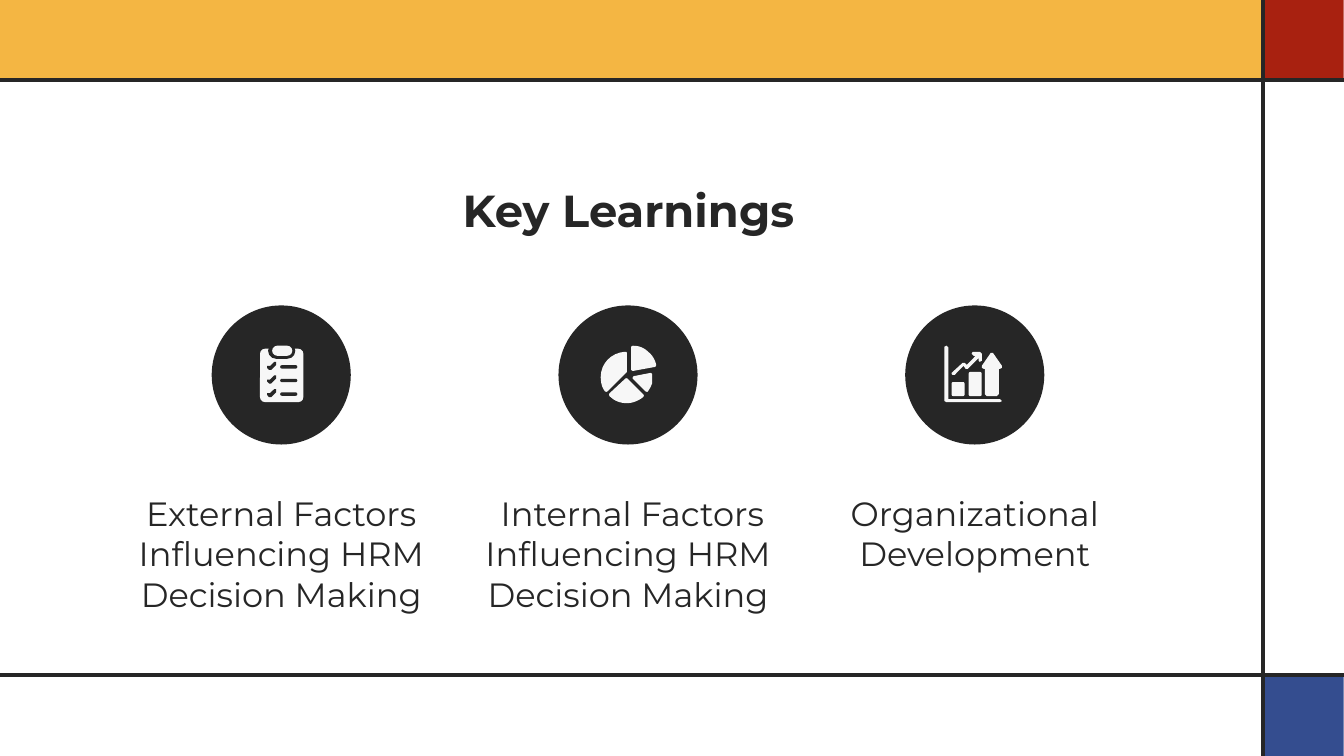
import pptx
import pptx.dml.color
import pptx.enum.shapes
import pptx.enum.text
import pptx.util
from lxml import etree

COLOURS = {"ink": "262626", "paper": "F7F7F7", "yellow": "F4B643",
           "red": "A82110", "blue": "344D8F"}
SHAPES = pptx.enum.shapes.MSO_SHAPE
# The grid has square cells, ten to the inch
COLUMNS, ROWS = 133.33, 75
DRAWING = "http://schemas.openxmlformats.org/drawingml/2006/main"


def cells(count):
    return pptx.util.Inches(count / 10)


def colour(name):
    return pptx.dml.color.RGBColor.from_string(COLOURS[name])


def flatten(path, steps=8):
    """Turn points and cubic curves (six numbers) into plain points."""
    points = []
    for part in path:
        if len(part) == 2:
            points.append(part)
            continue
        x0, y0 = points[-1]
        x1, y1, x2, y2, x3, y3 = part
        for step in range(1, steps + 1):
            t = step / steps
            a, b, c, d = (1 - t) ** 3, 3 * t * (1 - t) ** 2, 3 * t * t * (1 - t), t ** 3
            points.append((a * x0 + b * x1 + c * x2 + d * x3,
                           a * y0 + b * y1 + c * y2 + d * y3))
    return points


class Sheet:
    text_format = {"name": "Montserrat", "size": pptx.util.Pt(24), "bold": False}
    line_width = pptx.util.Pt(2.75)

    def __init__(self, page):
        self.shapes = page.shapes
        self.origin = (0, 0)

    def place(self, column, row):
        return cells(self.origin[0] + column), cells(self.origin[1] + row)

    def paint(self, shape, fill):
        shape.shadow.inherit = False
        shape.fill.solid()
        shape.fill.fore_color.rgb = colour(fill)
        shape.line.fill.background()

    def block(self, column, row, width, height, fill, kind=SHAPES.RECTANGLE, radius=0):
        shape = self.shapes.add_shape(kind, *self.place(column, row),
                                      cells(width), cells(height))
        if radius:
            shape.adjustments[0] = radius / min(width, height)
        self.paint(shape, fill)

    def rounded(self, column, row, width, height, fill="paper", radius=0.17):
        self.block(column, row, width, height, fill, SHAPES.ROUNDED_RECTANGLE, radius)

    def outline(self, path, fill="paper"):
        points = [self.place(*point) for point in flatten(path)]
        builder = self.shapes.build_freeform(*points[0], scale=1.0)
        builder.add_line_segments(points[1:], close=True)
        self.paint(builder.convert_to_shape(), fill)

    def line(self, start, end):
        line = self.shapes.add_connector(pptx.enum.shapes.MSO_CONNECTOR.STRAIGHT,
                                         *self.place(*start), *self.place(*end))
        line.line.color.rgb = colour("ink")
        line.line.width = self.line_width
        etree.SubElement(line._element.spPr, f"{{{DRAWING}}}effectLst")

    def text(self, column, row, width, height, words, **changes):
        box = self.shapes.add_textbox(*self.place(column, row), cells(width), cells(height))
        box.text_frame.word_wrap = True
        box.text_frame.auto_size = pptx.enum.text.MSO_AUTO_SIZE.SHAPE_TO_FIT_TEXT
        para = box.text_frame.paragraphs[0]
        para.alignment = pptx.enum.text.PP_ALIGN.CENTER
        span = para.add_run()
        span.text = words
        for name, value in {**self.text_format, **changes}.items():
            setattr(span.font, name, value)
        span.font.color.rgb = colour("ink")


# Icon outlines, in cells from the centre of the disc
PIE = [
    [(2.8, -1), (2.7, -1.5, 2.4, -2, 2, -2.3), (1.6, -2.7, 1.1, -2.9, 0.5, -2.9),
     (0.4, -2.9, 0.3, -2.8, 0.3, -2.7), (0.3, -0.6), (0.3, -0.5, 0.4, -0.4, 0.5, -0.4),
     (2.7, -0.8), (2.8, -0.9, 2.8, -1, 2.8, -1)],
    [(-1.8, 1.8), (-1.9, 1.9, -1.9, 2.1, -1.7, 2.2), (-1.3, 2.6, -0.7, 2.8, -0.1, 2.8),
     (0.4, 2.8, 1, 2.6, 1.5, 2.2), (1.6, 2.1, 1.6, 2, 1.5, 1.9), (0, 0.4),
     (-0.1, 0.3, -0.2, 0.3, -0.3, 0.4)],
    [(2.4, -0.1), (2.4, -0.1, 2.3, -0.2, 2.2, -0.2), (0.7, 0.1),
     (0.5, 0.1, 0.4, 0.3, 0.5, 0.4), (1.7, 1.6), (1.8, 1.7, 2, 1.7, 2, 1.6),
     (2.2, 1.3, 2.3, 1.1, 2.4, 0.8), (2.4, 0.5, 2.4, 0.2, 2.4, -0.1)],
    [(-0.4, 0), (-0.2, -0.2), (-0.1, -0.3), (-0.1, -2.1),
     (-0.1, -2.3, -0.2, -2.3, -0.3, -2.3), (-1.7, -2.2, -2.7, -1.1, -2.7, 0.2),
     (-2.7, 0.7, -2.6, 1.2, -2.3, 1.6), (-2.2, 1.7, -2.1, 1.7, -2, 1.6)],
]
TICK = [(-0.5, -0.2), (-1, 0.3), (-1.2, 0.3), (-1.4, 0.1), (-1.4, -0.1),
        (-1.1, -0.1), (-0.7, -0.5), (-0.5, -0.5)]
TREND = [(-2, 0), (-1.1, -0.9), (-0.9, -0.6), (-0.7, -0.6), (0.4, -1.7), (0.4, -1.4),
         (0.5, -1.3), (0.7, -1.4), (0.7, -2.1), (0.5, -2.3), (-0.2, -2.3), (-0.3, -2.1),
         (-0.1, -1.9), (0.1, -1.9), (-0.8, -1), (-1, -1.2), (-1.2, -1.2), (-2.3, -0.2),
         (-2.3, -0.1), (-2.2, 0)]
ARROW = [(0.9, -0.6), (1, -0.6), (1, 1.9), (1.2, 2.1), (2.2, 2.1), (2.4, 1.9),
         (2.4, -0.6), (2.5, -0.6), (2.7, -0.7), (2.7, -0.9), (1.8, -2.2), (1.6, -2.2),
         (0.7, -0.9), (0.7, -0.7)]
AXES = [(2.5, 2.4), (-2.6, 2.4), (-2.6, -2.7), (-2.8, -2.9), (-3, -2.8), (-3, 2.6),
        (-2.8, 2.7), (2.5, 2.7), (2.7, 2.6)]


def draw_clipboard(sheet):
    sheet.rounded(-2.1, -2.6, 4.3, 5.3, radius=0.5)
    sheet.rounded(-1.3, -3.2, 2.7, 1.6, "ink", radius=0.8)
    sheet.rounded(-0.9, -2.9, 2, 1, radius=0.5)
    for item in range(3):
        middle = -0.8 + 1.35 * item
        sheet.rounded(-0.1, middle - 0.17, 1.7, 0.34, "ink")
        sheet.outline([(x, y + middle) for x, y in TICK], "ink")


def draw_pie(sheet):
    for slice_path in PIE:
        sheet.outline(slice_path)


def draw_growth(sheet):
    sheet.rounded(-2.3, 0.7, 1.3, 1.4)
    sheet.rounded(-0.6, -0.3, 1.3, 2.4)
    for path in (TREND, ARROW, AXES):
        sheet.outline(path)


def main():
    deck = pptx.Presentation()
    deck.slide_width, deck.slide_height = cells(COLUMNS), cells(ROWS)
    sheet = Sheet(deck.slides.add_slide(deck.slide_layouts[6]))

    # Coloured frame
    side, band = 125.3, 8
    sheet.block(side, ROWS - band, band, band, "blue")
    sheet.block(side, 0, band, band, "red")
    sheet.block(0, 0, side, band, "yellow")
    for row in (7.9, 67):
        sheet.line((COLUMNS, row), (0, row))
    sheet.line((side, 0), (side, ROWS))

    # Title
    sheet.text(25.4, 17.6, 73.9, 6.4, "Key Learnings", size=pptx.util.Pt(32), bold=True)

    # Three learnings, each a disc with an icon and a label
    learnings = [
        ("External Factors Influencing HRM Decision Making", 13.1, draw_clipboard),
        (" Internal Factors Influencing HRM Decision Making", 13.1, draw_pie),
        ("Organizational Development", 9.1, draw_growth),
    ]
    for index, (label, height, draw_icon) in enumerate(learnings):
        sheet.origin = (27.9 + 34.4 * index, 37.2)
        sheet.block(-6.9, -6.9, 13.8, 13.8, "ink", SHAPES.OVAL)
        draw_icon(sheet)
        sheet.text(-16.5, 11.2, 33, height, label)

    deck.save("out.pptx")


if __name__ == "__main__":
    main()
